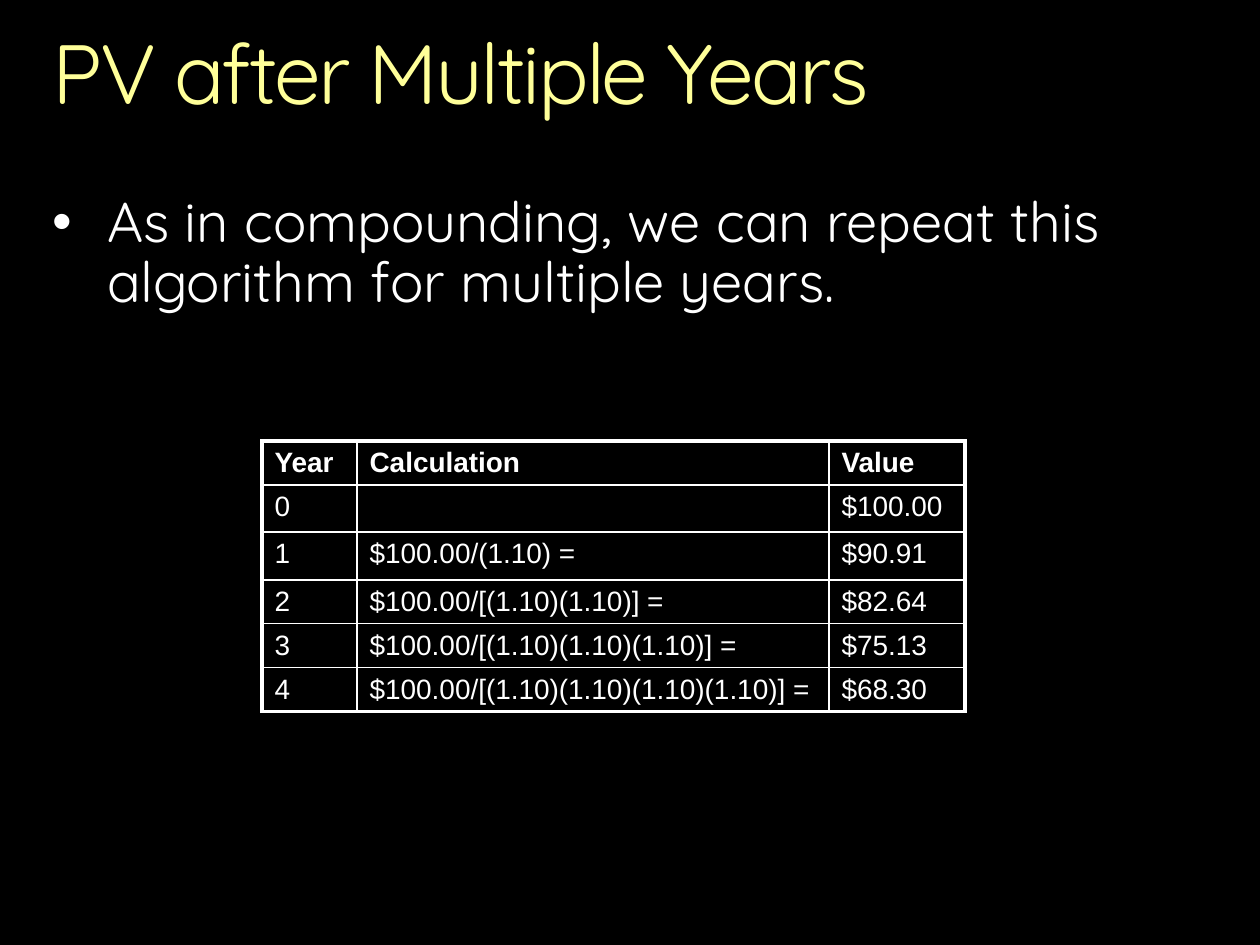
from dataclasses import dataclass

from lxml import etree
from pptx import Presentation
from pptx import util as u
from pptx.dml.color import RGBColor
from pptx.enum import text
from pptx.oxml import ns

EMU_PER_PX = 914400 / 126
COLORS = {"background": "000000", "title": "FFFF99", "text": "FFFFFF"}
OUTER_LINE, INNER_LINE = 2.25, 1

COLUMN_WIDTHS = [95, 472, 136]
ROW_HEIGHTS = [44, 44, 48, 44, 44, 44]
ROWS = [
    ("Year", "Calculation", "Value"),
    ("0", "", "$100.00"),
    ("1", "$100.00/(1.10) =", "$90.91"),
    ("2", "$100.00/[(1.10)(1.10)] =", "$82.64"),
    ("3", "$100.00/[(1.10)(1.10)(1.10)] =", "$75.13"),
    ("4", "$100.00/[(1.10)(1.10)(1.10)(1.10)] =", "$68.30"),
]


@dataclass
class TextBlock:
    words: str
    left: int
    top: int
    width: int
    height: int
    size: int
    color: str
    tracking: float = 0
    hanging: int = 0


BLOCKS = [
    TextBlock("PV after Multiple Years", 53, 32, 1155, 92, 48, "title", tracking=-1.5),
    TextBlock("As in compounding, we can repeat this algorithm for multiple years.",
              53, 194, 1155, 122, 32, "text", hanging=54),
]


def px(length: int) -> u.Emu:
    return u.Emu(round(length * EMU_PER_PX))


def rgb(name: str) -> RGBColor:
    return RGBColor.from_string(COLORS[name])


def style_font(font, name: str, size: int, color: str, bold: bool = False) -> None:
    font.name, font.size, font.bold = name, u.Pt(size), bold
    font.color.rgb = rgb(color)


def add_bullet(para, hanging: int) -> None:
    properties = para._p.get_or_add_pPr()
    properties.set("marL", str(px(hanging)))
    properties.set("indent", str(-px(hanging)))
    font = etree.SubElement(properties, ns.qn("a:buFont"))
    font.set("typeface", "Arial")
    etree.SubElement(properties, ns.qn("a:buChar")).set("char", "•")


def add_block(page, block: TextBlock) -> None:
    box = page.shapes.add_textbox(px(block.left), px(block.top),
                                  px(block.width), px(block.height))
    frame = box.text_frame
    frame.word_wrap = True
    frame.auto_size = text.MSO_AUTO_SIZE.NONE
    frame.margin_left = frame.margin_right = frame.margin_top = frame.margin_bottom = 0
    frame.text = block.words
    para = frame.paragraphs[0]
    para.line_spacing = 0.9
    if block.hanging:
        add_bullet(para, block.hanging)
    span = para.runs[0]
    style_font(span.font, "Quicksand", block.size, block.color)
    if block.tracking:
        span.font._element.set("spc", str(round(block.tracking * 100)))


def set_border(cell, side: str, points: float) -> None:
    line = etree.SubElement(cell._tc.get_or_add_tcPr(), ns.qn(f"a:ln{side}"))
    line.set("w", str(u.Pt(points)))
    fill = etree.SubElement(line, ns.qn("a:solidFill"))
    etree.SubElement(fill, ns.qn("a:srgbClr")).set("val", COLORS["text"])


def fill_cell(cell, words: str, bold: bool) -> None:
    cell.text_frame.text = words
    para = cell.text_frame.paragraphs[0]
    for span in para.runs:
        style_font(span.font, "Arial", 16, "text", bold)
    if not words:
        # An empty cell takes its line height from the paragraph end mark.
        para._p.get_or_add_endParaRPr().set("sz", "1600")


def add_value_table(page, left: int, top: int) -> None:
    last_row, last_column = len(ROWS) - 1, len(COLUMN_WIDTHS) - 1
    table = page.shapes.add_table(
        len(ROWS), len(COLUMN_WIDTHS), px(left), px(top),
        px(sum(COLUMN_WIDTHS)), px(sum(ROW_HEIGHTS))).table
    table.first_row = table.horz_banding = False
    for column, width in zip(table.columns, COLUMN_WIDTHS):
        column.width = px(width)
    for row, height in zip(table.rows, ROW_HEIGHTS):
        row.height = px(height)
    for r, values in enumerate(ROWS):
        for c, words in enumerate(values):
            cell = table.cell(r, c)
            fill_cell(cell, words, bold=r == 0)
            on_edge = {"L": c == 0, "R": c == last_column,
                       "T": r == 0, "B": r == last_row}
            for side, outer in on_edge.items():
                set_border(cell, side, OUTER_LINE if outer else INNER_LINE)
            cell.fill.background()


def main() -> None:
    deck = Presentation()
    deck.slide_width, deck.slide_height = px(1260), px(945)
    page = deck.slides.add_slide(deck.slide_layouts[6])
    page.background.fill.solid()
    page.background.fill.fore_color.rgb = rgb("background")
    for block in BLOCKS:
        add_block(page, block)
    add_value_table(page, 262, 441)
    deck.save("out.pptx")


if __name__ == "__main__":
    main()
